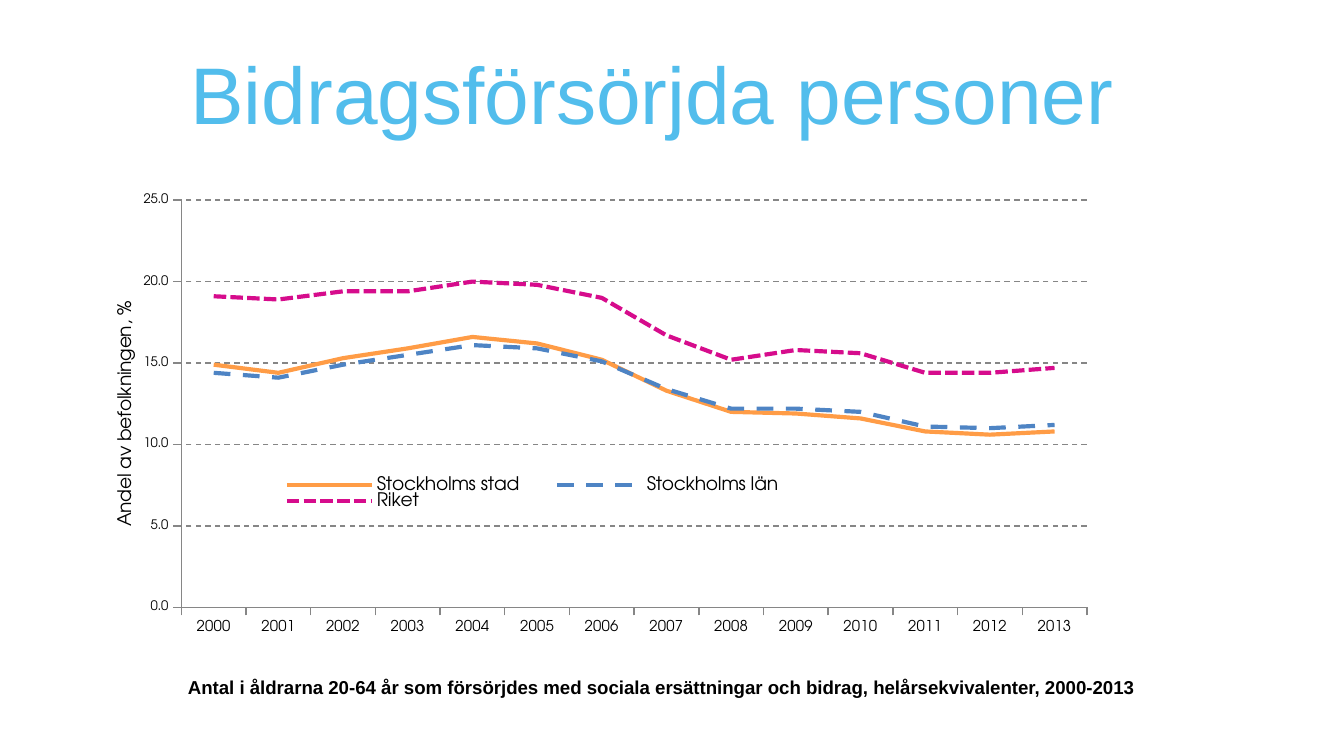
from dataclasses import dataclass

from lxml.etree import SubElement
from pptx import Presentation
from pptx.chart.data import CategoryChartData as ChartData
from pptx.dml.color import RGBColor as Rgb
from pptx.enum.chart import XL_CHART_TYPE as Kind
from pptx.enum.chart import XL_LEGEND_POSITION as Spot
from pptx.enum.chart import XL_MARKER_STYLE as Mark
from pptx.enum.chart import XL_TICK_MARK as Tick
from pptx.enum.dml import MSO_LINE as Dash
from pptx.enum.text import MSO_ANCHOR as Anchor
from pptx.enum.text import PP_ALIGN as Align
from pptx.oxml.ns import qn
from pptx.util import Inches, Pt


@dataclass(frozen=True)
class Theme:
    """Hold the colours, fonts and sizes."""
    sky: str = "52BDEC"
    ink: str = "000000"
    grey: str = "868686"
    face: str = "Arial"
    plot: str = "TeX Gyre Adventor"
    head: float = 43
    text: float = 10
    years: float = 8
    ticks: float = 7
    line: float = 2.25
    thin: float = 0.75


THEME = Theme()
YEARS = [str(year) for year in range(2000, 2014)]
SERIES = [
    ("Stockholms stad", "FF9C46", Dash.SOLID,
     (14.9, 14.4, 15.3, 15.9, 16.6, 16.2, 15.2,
      13.3, 12, 11.9, 11.6, 10.8, 10.6, 10.8)),
    ("Stockholms län", "4E84C4", Dash.DASH,
     (14.4, 14.1, 14.9, 15.5, 16.1, 15.9, 15.1,
      13.4, 12.2, 12.2, 12, 11.1, 11, 11.2)),
    ("Riket", "D60C8C", Dash.SQUARE_DOT,
     (19.1, 18.9, 19.4, 19.4, 20, 19.8, 19,
      16.7, 15.2, 15.8, 15.6, 14.4, 14.4, 14.7)),
]


def style(font, face, size, color=THEME.ink, bold=False):
    """Set the look of a font."""
    font.name, font.size, font.bold = face, Pt(size), bold
    font.color.rgb = Rgb.from_string(color)


def stroke(line, color, width, dash=Dash.SOLID):
    """Set the look of a line."""
    line.color.rgb = Rgb.from_string(color)
    line.width, line.dash_style = Pt(width), dash


def place(part, index, box, inner=False):
    """Fix a chart part at shares of the chart's size."""
    for old in part.findall(qn("c:layout")):
        part.remove(old)
    layout = part.makeelement(qn("c:layout"))
    part.insert(index, layout)
    manual = SubElement(layout, qn("c:manualLayout"))
    rules = [("layoutTarget", "inner")] if inner else []
    rules += [("xMode", "edge"), ("yMode", "edge"), *zip("xywh", box)]
    for name, value in rules:
        SubElement(manual, qn(f"c:{name}")).set("val", str(value))


def add_title(slide, box):
    """Place the slide title."""
    title = slide.shapes.title
    title.left, title.top, title.width, title.height = map(Inches, box)
    frame = title.text_frame
    frame.text = "Bidragsförsörjda personer"
    frame.vertical_anchor = Anchor.MIDDLE
    para = frame.paragraphs[0]
    para.alignment = Align.CENTER
    style(para.font, THEME.face, THEME.head, THEME.sky)


def set_axes(chart):
    """Format both axes, the grid and the axis title."""
    years, share = chart.category_axis, chart.value_axis
    for axis, size in ((years, THEME.years), (share, THEME.ticks)):
        axis.major_tick_mark = Tick.OUTSIDE
        axis.minor_tick_mark = Tick.NONE
        style(axis.tick_labels.font, THEME.plot, size)
        stroke(axis.format.line, THEME.grey, THEME.thin)
    share.minimum_scale, share.maximum_scale, share.major_unit = 0, 25, 5
    share.tick_labels.number_format = "#,##0.0"
    share.tick_labels.number_format_is_linked = False
    share.has_major_gridlines = True
    stroke(share.major_gridlines.format.line, THEME.grey, THEME.thin,
           Dash.DASH)
    frame = share.axis_title.text_frame
    frame.text = "Andel av befolkningen, %"
    style(frame.paragraphs[0].font, THEME.plot, THEME.text)
    body = frame._txBody.find(qn("a:bodyPr"))
    body.set("rot", "-5400000")
    body.set("vert", "horz")


def add_lines(slide, box):
    """Place the line chart with its legend."""
    data = ChartData(number_format="0.0")
    data.categories = YEARS
    for name, _, _, values in SERIES:
        data.add_series(name, values)
    chart = slide.shapes.add_chart(Kind.LINE, *map(Inches, box), data).chart
    style(chart.font, THEME.plot, THEME.text)
    chart.has_title = False
    set_axes(chart)
    plot = chart.plots[0]
    plot.vary_by_categories = False
    for line, (_, color, dash, _) in zip(plot.series, SERIES):
        line.smooth = False
        line.marker.style = Mark.NONE
        stroke(line.format.line, color, THEME.line, dash)
    chart.has_legend = True
    legend = chart.legend
    legend.position = Spot.BOTTOM
    legend.include_in_layout = False
    style(legend.font, THEME.plot, THEME.text)
    place(legend._element, 1, (0.14, 0.55, 0.54, 0.06))
    area = chart._chartSpace.chart.plotArea
    place(area, 0, (0.068, 0.023, 0.882, 0.777), inner=True)


def add_note(slide, box):
    """Place the caption below the chart."""
    frame = slide.shapes.add_textbox(*map(Inches, box)).text_frame
    frame.word_wrap = True
    frame.text = ("Antal i åldrarna 20-64 år som försörjdes med sociala "
                  "ersättningar och bidrag, helårsekvivalenter, 2000-2013")
    style(frame.paragraphs[0].font, THEME.face, THEME.text, bold=True)


def main():
    """Build and save the slide."""
    deck = Presentation()
    deck.slide_width = Inches(10)
    deck.slide_height = deck.slide_width * 9 // 16
    slide = deck.slides.add_slide(deck.slide_layouts[5])
    add_title(slide, (0.35, 0.22, 9, 0.94))
    add_lines(slide, (0.83, 1.4, 7.64, 3.9))
    add_note(slide, (1.3, 4.98, 7.56, 0.27))
    deck.save("out.pptx")


if __name__ == "__main__":
    main()
